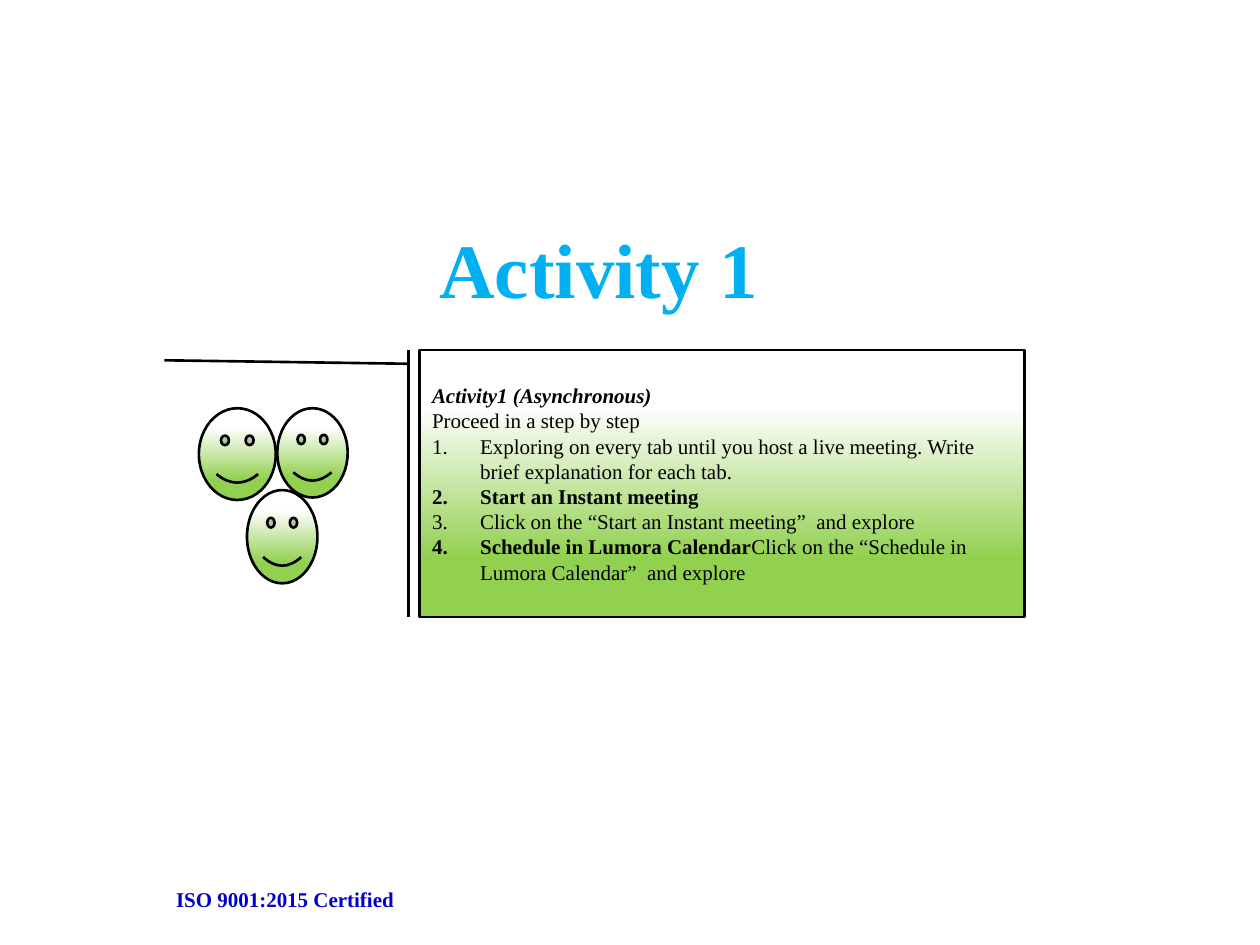
from dataclasses import dataclass

from lxml import etree
from pptx import Presentation
from pptx import util as u
from pptx.dml.color import RGBColor
from pptx.enum import shapes, text
from pptx.oxml import ns


@dataclass(frozen=True)
class Theme:
    font: str = "Times New Roman"
    title: str = "00B0F0"
    footer: str = "0000CC"
    ink: str = "000000"
    fade: tuple = ((0.21, "FFFFFF"), (0.78, "92D050"))
    title_size: int = 44
    body_size: int = 12
    outline: float = 1.5


THEME = Theme()
INTRO = [("Activity1 (Asynchronous)", dict(bold=True, italic=True))], [("Proceed in a step by step", {})]
STEPS = (
    [("Exploring on every tab until you host a live meeting. "
      "Write brief explanation for each tab.", {})],
    [("Start an Instant meeting", dict(bold=True))],
    [("Click on the “Start an Instant meeting”  and explore", {})],
    [("Schedule in Lumora Calendar", dict(bold=True)),
     ("Click on the “Schedule in Lumora Calendar”  and explore", {})],
)


def cm_box(box):
    return [u.Cm(length) for length in box]


def add_text(paragraph, words, size=THEME.body_size, color=THEME.ink, bold=False, italic=False):
    run = paragraph.add_run()
    run.text = words
    font = run.font
    font.name, font.size, font.bold, font.italic = THEME.font, u.Pt(size), bold, italic
    font.color.rgb = RGBColor.from_string(color)


def number_paragraph(paragraph, indent=0.97):
    """Give the paragraph automatic numbering with a hanging indent in cm."""
    properties = paragraph._p.get_or_add_pPr()
    properties.set("marL", str(u.Cm(indent)))
    properties.set("indent", str(-u.Cm(indent)))
    etree.SubElement(properties, ns.qn("a:buFont"), typeface="+mj-lt")
    etree.SubElement(properties, ns.qn("a:buAutoNum"), type="arabicPeriod")


def add_faded_shape(slide, kind, box, adjustments):
    shape = slide.shapes.add_shape(kind, *cm_box(box))
    for index, value in enumerate(adjustments):
        shape.adjustments[index] = value
    shape.shadow.inherit = False
    shape.fill.gradient()
    shape.fill.gradient_angle = 270
    for stop, (position, color) in zip(shape.fill.gradient_stops, THEME.fade):
        stop.position = position
        stop.color.rgb = RGBColor.from_string(color)
    shape.line.color.rgb = RGBColor.from_string(THEME.ink)
    shape.line.width = u.Pt(THEME.outline)
    return shape


def place_title(slide, box):
    title = slide.shapes.title
    title.left, title.top, title.width, title.height = cm_box(box)
    frame = title.text_frame
    frame.vertical_anchor = text.MSO_ANCHOR.MIDDLE
    heading = frame.paragraphs[0]
    heading.alignment = text.PP_ALIGN.CENTER
    add_text(heading, "Activity 1", size=THEME.title_size, color=THEME.title, bold=True)


def place_instructions(slide, box):
    callout = add_faded_shape(
        slide, shapes.MSO_SHAPE.LINE_CALLOUT_1_BORDER_AND_ACCENT_BAR, box,
        (0.051, -0.018, 0.038, -0.422))
    frame = callout.text_frame
    frame.word_wrap = True
    frame.vertical_anchor = text.MSO_ANCHOR.MIDDLE
    for index, parts in enumerate((*INTRO, *STEPS)):
        paragraph = frame.add_paragraph() if index else frame.paragraphs[0]
        paragraph.alignment = text.PP_ALIGN.LEFT
        if index >= len(INTRO):
            number_paragraph(paragraph)
        for words, style in parts:
            add_text(paragraph, words, **style)


def place_faces(slide, left, top):
    for x, y, width, height in ((0, 0, 1.55, 1.85), (1.58, 0, 1.42, 1.8), (0.97, 1.65, 1.42, 1.88)):
        add_faded_shape(slide, shapes.MSO_SHAPE.SMILEY_FACE,
                        (left + x, top + y, width, height), (0.047,))


def place_footer(slide, box):
    frame = slide.shapes.add_textbox(*cm_box(box)).text_frame
    frame.word_wrap = True
    add_text(frame.paragraphs[0], "ISO 9001:2015 Certified", color=THEME.footer, bold=True)


def main():
    deck = Presentation()
    deck.slide_width, deck.slide_height = u.Cm(25.4), u.Cm(19.05)
    slide = deck.slides.add_slide(deck.slide_layouts.get_by_name("Title Only"))
    place_footer(slide, (3.3, 17.75, 13.18, 0.76))
    place_title(slide, (0.64, 3.81, 22.86, 3.18))
    place_instructions(slide, (8.46, 7.06, 12.19, 5.38))
    place_faces(slide, 4.01, 8.23)
    deck.save("out.pptx")


if __name__ == "__main__":
    main()
